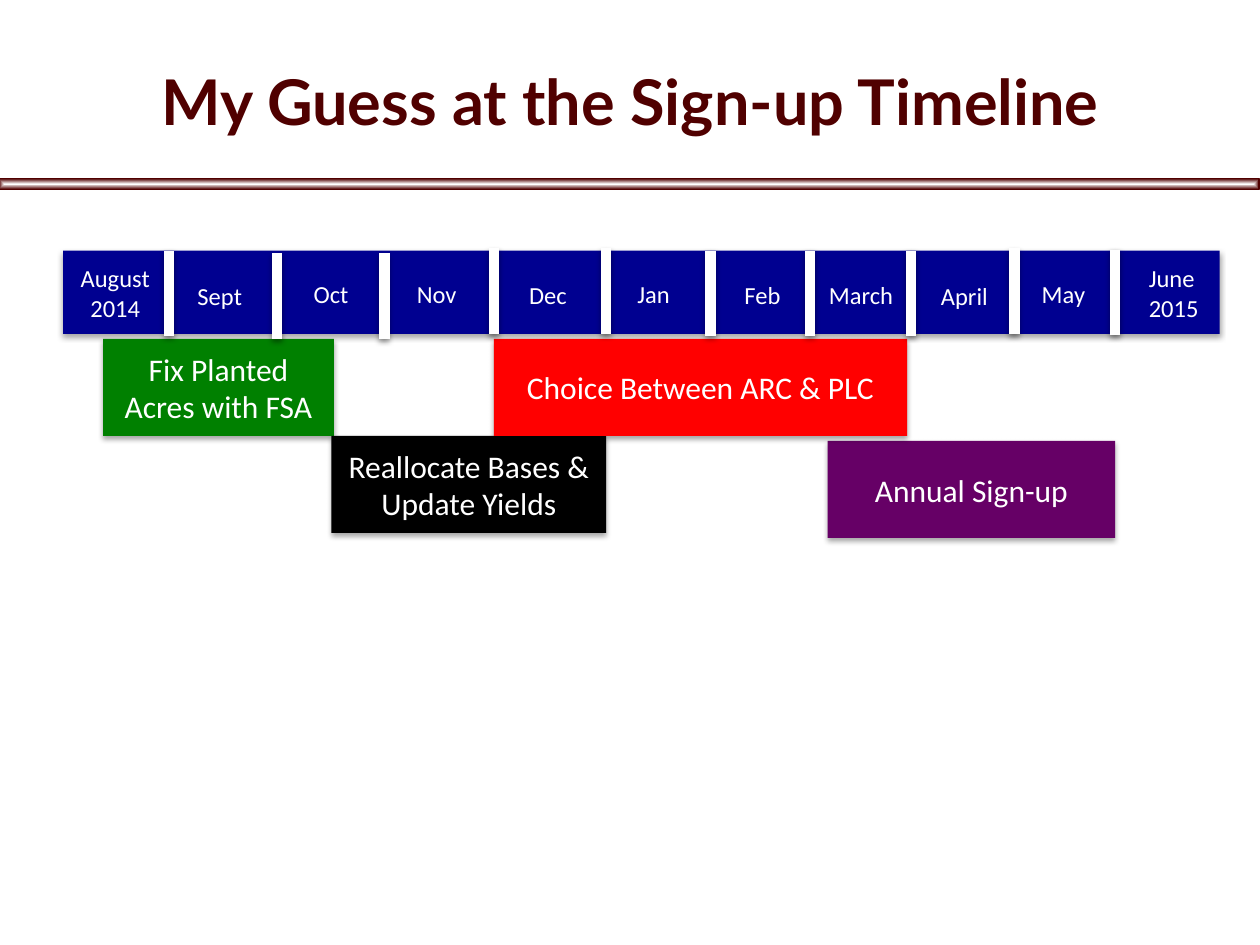
from dataclasses import dataclass
from lxml.etree import SubElement
from pptx import Presentation
from pptx.dml.color import RGBColor as RGB
from pptx.enum.shapes import MSO_CONNECTOR as CONN, MSO_SHAPE as SHAPE
from pptx.enum.text import MSO_ANCHOR as ANCHOR, MSO_AUTO_SIZE as AUTO, PP_ALIGN as ALIGN
from pptx.oxml.ns import qn
from pptx.util import Pt


@dataclass(frozen=True)
class Theme:
    """Colours, fonts and type sizes of the slide."""
    maroon: str = "500000"
    navy: str = "000090"
    green: str = "008000"
    black: str = "000000"
    red: str = "FF0000"
    purple: str = "660066"
    white: str = "FFFFFF"
    head_font: str = "Lato"
    body_font: str = "Calibri"
    title: int = 36
    phase: int = 18
    month: int = 14


T = Theme()
BAR = (36, 143.3, 661, 47.5)
DIVIDER_LENGTH = 49
DIVIDERS = [(96.5, 143.3), (158.4, 144.7), (219.6, 144.7), (282.2, 141.8), (346.3, 141.8),
            (406.1, 143.3), (463, 143.3), (520.6, 143.3), (579.6, 141.8), (637.2, 142.6)]
PHASES = [("Annual Sign-up", T.purple, 473, 252, 164.2),
          ("Fix Planted Acres with FSA", T.green, 59, 193.7, 131.8),
          ("Reallocate Bases & Update Yields", T.black, 189.4, 249.1, 157),
          ("Choice Between ARC & PLC", T.red, 282.2, 193.7, 236.2)]
PHASE_HEIGHT = 55.4
MONTHS = [("Sept", 105.8, 157, 40.3), ("Oct", 172.1, 156.2, 34.6), ("Nov", 231.1, 156.2, 37.4),
          ("Dec", 295.2, 156.6, 36.7), ("Jan", 357.1, 156.2, 33.1), ("Feb", 418.3, 156.6, 35.3),
          ("March", 466.6, 156.6, 51.8), ("April", 530.6, 157, 41.8), ("May", 588.2, 156.2, 39.6)]


def write(tf, text, size, font=T.body_font, color=T.white, bold=False, align=ALIGN.CENTER):
    """Fill a text frame, one paragraph per line of text."""
    for i, line in enumerate(text.split("\n")):
        p = tf.add_paragraph() if i else tf.paragraphs[0]
        p.alignment = align
        r = p.add_run()
        r.text = line
        r.font.size, r.font.name, r.font.bold = Pt(size), font, bold
        r.font.color.rgb = RGB.from_string(color)


def add_shadow(sp, blur=3.1, dist=1.8, alpha=35):
    """Give a shape a soft shadow straight below it."""
    effects = SubElement(sp._element.spPr, qn("a:effectLst"))
    shadow = SubElement(effects, qn("a:outerShdw"), blurRad=str(Pt(blur)), dist=str(Pt(dist)),
                        dir="5400000", rotWithShape="0")
    color = SubElement(shadow, qn("a:srgbClr"), val=T.black)
    SubElement(color, qn("a:alpha"), val=str(alpha * 1000))


def add_block(s, box, fill, text=""):
    """Add a borderless filled rectangle with a shadow and optional text."""
    sp = s.shapes.add_shape(SHAPE.RECTANGLE, *map(Pt, box))
    sp.fill.solid()
    sp.fill.fore_color.rgb = RGB.from_string(fill)
    sp.line.fill.background()
    add_shadow(sp)
    if text:
        sp.text_frame.vertical_anchor = ANCHOR.MIDDLE
        write(sp.text_frame, text, T.phase)


def add_divider(s, x, top):
    """Add a thick white vertical line between two months."""
    line = s.shapes.add_connector(CONN.STRAIGHT, Pt(x), Pt(top), Pt(x), Pt(top + DIVIDER_LENGTH))
    line.line.color.rgb = RGB.from_string(T.white)
    line.line.width = Pt(6)
    add_shadow(line, dist=1.6, alpha=38)


def add_label(s, text, box, wrap=False, align=ALIGN.LEFT):
    """Add a month label."""
    tf = s.shapes.add_textbox(*map(Pt, box)).text_frame
    tf.word_wrap = wrap
    tf.auto_size = AUTO.SHAPE_TO_FIT_TEXT
    write(tf, text, T.month, align=align)


def add_title(s, text):
    """Place and format the title placeholder."""
    sp = s.shapes.title
    sp.left, sp.top, sp.width, sp.height = map(Pt, (36, 12.2, 648, 90))
    sp.text_frame.vertical_anchor = ANCHOR.MIDDLE
    write(sp.text_frame, text, T.title, font=T.head_font, color=T.maroon, bold=True)


def add_rule(s):
    """Add the rule under the title, shaded from a white centre to maroon."""
    sp = s.shapes.add_shape(SHAPE.RECTANGLE, Pt(-0.5), Pt(102.2), Pt(720), Pt(6))
    sp.shadow.inherit = False
    sp.fill.gradient()
    for stop, color, position in zip(sp.fill.gradient_stops, (T.white, T.maroon), (0, 1)):
        stop.color.rgb = RGB.from_string(color)
        stop.position = position
    grad = sp._element.spPr.find(qn("a:gradFill"))
    grad.remove(grad.find(qn("a:lin")))
    shade = SubElement(grad, qn("a:path"), path="shape")
    SubElement(shade, qn("a:fillToRect"), {side: "50000" for side in "ltrb"})
    sp.line.color.rgb = RGB.from_string(T.maroon)
    sp.line.width = Pt(0.75)


def main():
    """Build the timeline slide."""
    prs = Presentation()
    prs.slide_width, prs.slide_height = Pt(720), Pt(540)
    s = prs.slides.add_slide(prs.slide_layouts[5])
    add_title(s, "My Guess at the Sign-up Timeline")
    add_block(s, BAR, T.navy)
    for text, color, left, top, width in PHASES:
        add_block(s, (left, top, width, PHASE_HEIGHT), color, text)
    for x, top in DIVIDERS:
        add_divider(s, x, top)
    add_label(s, "August 2014", (38.2, 146.9, 55.4, 41), wrap=True, align=ALIGN.CENTER)
    for text, left, top, width in MONTHS:
        add_label(s, text, (left, top, width, 24.5))
    add_label(s, "June\n2015", (649.4, 146.9, 43.2, 41))
    add_rule(s)
    prs.save("out.pptx")


if __name__ == "__main__":
    main()
